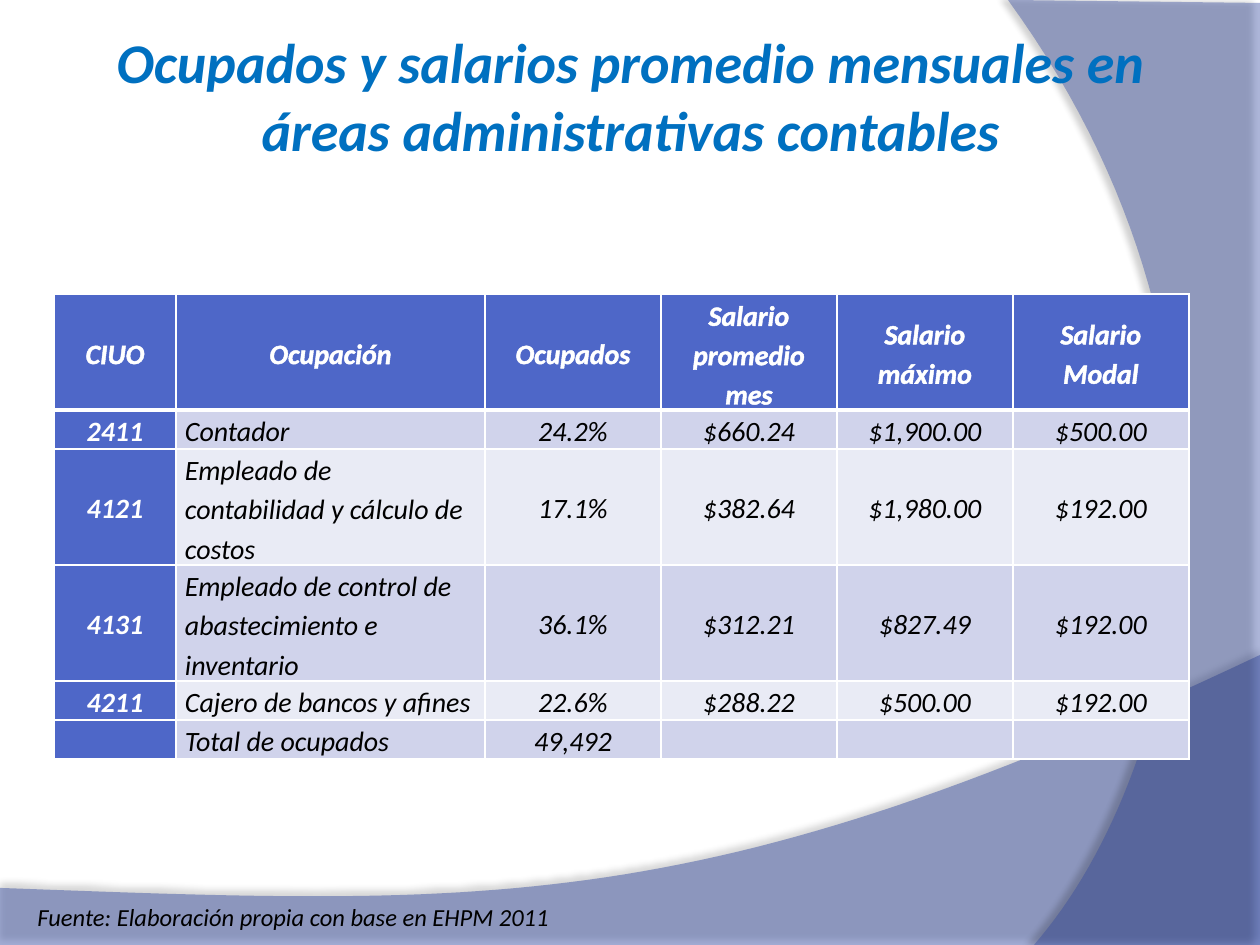
"""Build the slide on employment and average wages in accounting jobs."""
from dataclasses import dataclass

from lxml.etree import SubElement, fromstring
from pptx import Presentation
from pptx.dml.color import RGBColor as Rgb
from pptx.enum.text import MSO_ANCHOR as Anchor, MSO_AUTO_SIZE as AutoSize, PP_ALIGN as Align
from pptx.oxml.ns import nsdecls, qn
from pptx.util import Pt


@dataclass(frozen=True)
class Theme:
    font: str = "Calibri"
    title: str = "0070C0"
    text: str = "000000"
    white: str = "FFFFFF"
    accent: str = "4E67C8"
    bands: tuple = ("D0D3EB", "E9EBF5")
    swoosh: str = "31489F"
    title_size: int = 32
    cell_size: int = 16
    source_size: int = 14


THEME = Theme()
TITLE = "Ocupados y salarios promedio mensuales en áreas administrativas contables"
SOURCE = "Fuente: Elaboración propia con base en EHPM 2011"
ROWS = [
    ("CIUO", "Ocupación", "Ocupados", "Salario promedio mes", "Salario máximo", "Salario Modal"),
    ("2411", "Contador", "24.2%", "$660.24", "$1,900.00", "$500.00"),
    ("4121", "Empleado de contabilidad y cálculo de costos", "17.1%", "$382.64", "$1,980.00", "$192.00"),
    ("4131", "Empleado de control de abastecimiento e inventario", "36.1%", "$312.21", "$827.49", "$192.00"),
    ("4211", "Cajero de bancos y afines", "22.6%", "$288.22", "$500.00", "$192.00"),
    ("", "Total de ocupados", "49,492", "", "", ""),
]
COLUMN_WIDTHS = [122, 309, 176, 176, 176, 176]
ROW_HEIGHTS = [115, 39, 116, 116, 39, 39]
SWOOSHES = [
    {"corners": [(0, 888), (0, 946), (1260, 946)],
     "curve": [(1260, 655), (704, 919), (493, 906), (0, 888)],
     "opacity": 45, "shadow": {"opacity": 35, "distance": 3.5, "angle": 270}},
    {"corners": [(1260, 3), (1260, 945)],
     "curve": [(1034, 945), (1178, 780), (1283, 378), (1008, 0)],
     "opacity": 40, "shadow": {"opacity": 45, "distance": 4, "angle": 180}},
]
CURVE_STEPS = 60


def px(length):
    return round(length * 914400 / 126)


def bezier(start, first, second, end):
    for step in range(CURVE_STEPS + 1):
        t = step / CURVE_STEPS
        weights = ((1 - t) ** 3, 3 * t * (1 - t) ** 2, 3 * t * t * (1 - t), t ** 3)
        yield tuple(sum(w * point[axis] for w, point in zip(weights, (start, first, second, end)))
                    for axis in (0, 1))


def add_swoosh(page, corners, curve, opacity, shadow):
    points = [(px(x), px(y)) for x, y in [*corners, *bezier(*curve)]]
    builder = page.shapes.build_freeform(*points[0])
    builder.add_line_segments(points[1:], close=True)
    shape = builder.convert_to_shape()
    shape.fill.solid()
    shape.fill.fore_color.rgb = Rgb.from_string(THEME.swoosh)
    shape.line.fill.background()
    properties = shape._element.spPr
    color = properties.find(qn("a:solidFill"))[0]
    SubElement(color, qn("a:alpha"), val=str(opacity * 1000))
    properties.append(fromstring(
        f'<a:effectLst {nsdecls("a")}><a:outerShdw blurRad="{Pt(4)}" dist="{Pt(shadow["distance"])}" '
        f'dir="{shadow["angle"] * 60000}" algn="ctr" rotWithShape="0"><a:srgbClr val="{THEME.text}">'
        f'<a:alpha val="{shadow["opacity"] * 1000}"/></a:srgbClr></a:outerShdw></a:effectLst>'))


def write(frame, text, size, color, bold=False, align=Align.LEFT):
    frame.text = text
    para = frame.paragraphs[0]
    para.alignment = align
    for span in para.runs:
        font = span.font
        font.name, font.size, font.bold, font.italic = THEME.font, Pt(size), bold, True
        font.color.rgb = Rgb.from_string(color)
    return para


def line_xml(tag, width):
    return fromstring(f'<a:{tag} {nsdecls("a")} w="{Pt(width)}"><a:solidFill>'
                      f'<a:srgbClr val="{THEME.white}"/></a:solidFill></a:{tag}>')


def fill_cell(cell, text, row, column):
    header, label = row == 0, row == 0 or column == 0
    cell.margin_left = cell.margin_right = px(9)
    cell.margin_top = cell.margin_bottom = 0
    cell.vertical_anchor = Anchor.MIDDLE
    para = write(cell.text_frame, text, THEME.cell_size, THEME.white if label else THEME.text, label,
                 Align.LEFT if column == 1 and not header else Align.CENTER)
    para.line_spacing = 1.15
    if header:
        for span in para.runs:
            span.font._element.insert(0, line_xml("ln", 0.73))
    cell.fill.solid()
    cell.fill.fore_color.rgb = Rgb.from_string(THEME.accent if label else THEME.bands[(row - 1) % 2])
    widths = {"lnL": 1, "lnR": 1, "lnT": 3 if row == 1 else 1, "lnB": 3 if header else 1}
    for index, (side, width) in enumerate(widths.items()):
        cell._tc.tcPr.insert(index, line_xml(side, width))


def add_wage_table(page):
    frame = page.shapes.add_table(len(ROWS), len(COLUMN_WIDTHS), px(54), px(294),
                                  px(sum(COLUMN_WIDTHS)), px(sum(ROW_HEIGHTS)))
    table = frame.table
    for column, width in zip(table.columns, COLUMN_WIDTHS):
        column.width = px(width)
    for row, height in zip(table.rows, ROW_HEIGHTS):
        row.height = px(height)
    for row, texts in enumerate(ROWS):
        for column, text in enumerate(texts):
            fill_cell(table.cell(row, column), text, row, column)


def main():
    deck = Presentation()
    deck.slide_width, deck.slide_height = px(1260), px(945)
    page = deck.slides.add_slide(deck.slide_layouts[5])
    for swoosh in SWOOSHES:
        add_swoosh(page, **swoosh)

    title = page.shapes.title
    title.left, title.top, title.width, title.height = px(64), px(16), px(1134), px(158)
    title.text_frame.vertical_anchor = Anchor.MIDDLE
    write(title.text_frame, TITLE, THEME.title_size, THEME.title, True, Align.CENTER)
    page.shapes._spTree.append(title._element)

    source = page.shapes.add_textbox(px(25), px(896), px(552), px(72))
    source.text_frame.word_wrap = False
    source.text_frame.auto_size = AutoSize.SHAPE_TO_FIT_TEXT
    write(source.text_frame, SOURCE, THEME.source_size, THEME.text)

    add_wage_table(page)
    deck.save("out.pptx")


if __name__ == "__main__":
    main()
